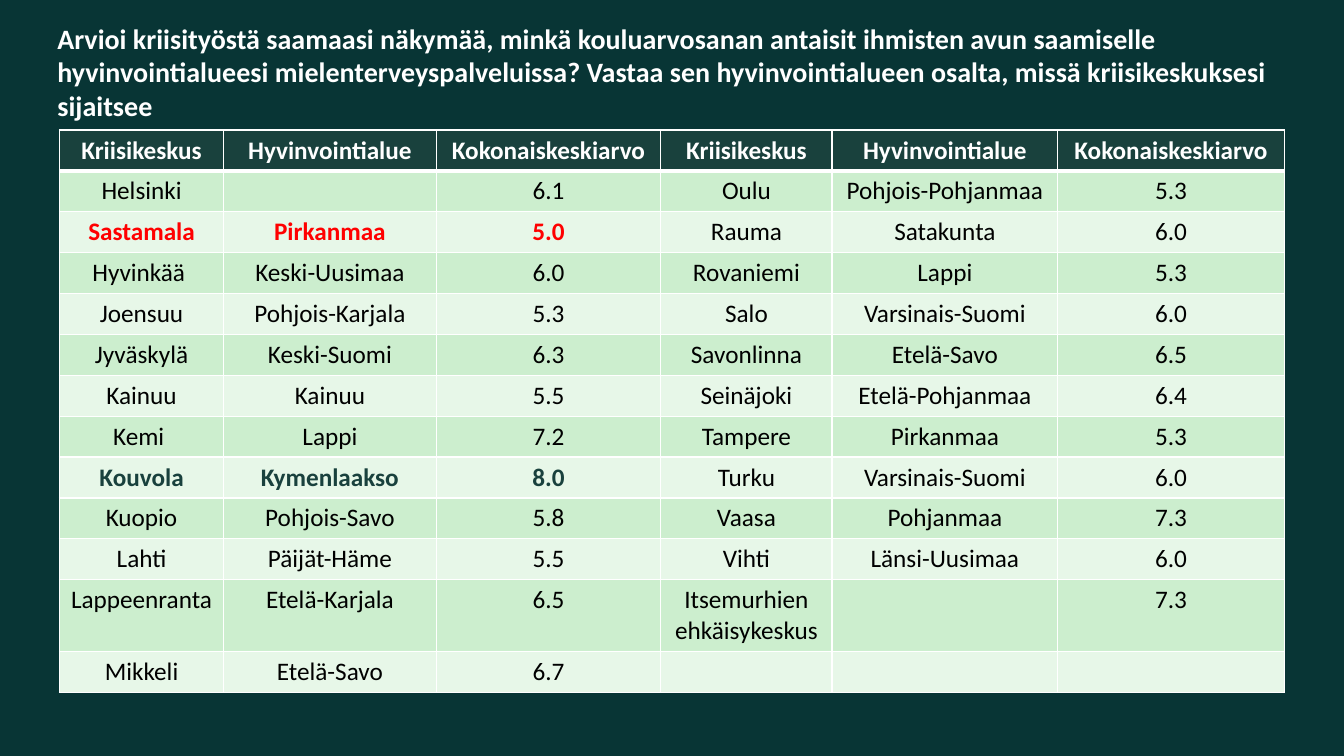
from lxml.etree import SubElement
from pptx import Presentation
from pptx.dml.color import RGBColor
from pptx.enum.text import PP_ALIGN
from pptx.oxml.ns import qn
from pptx.util import Inches, Pt

DARK_GREEN, WHITE, BLACK, RED = "19413D", "FFFFFF", "000000", "FF0000"
BANDS = ("E7F7E8", "CCEECE")
COLUMN_WIDTHS = (1.63, 2.11, 2.23, 1.7, 2.24, 2.25)
HIGHLIGHTS = {"Sastamala": RED, "Kouvola": DARK_GREEN}

QUESTION = (
    "Arvioi kriisityöstä saamaasi näkymää, minkä kouluarvosanan antaisit ihmisten "
    "avun saamiselle hyvinvointialueesi mielenterveyspalveluissa? Vastaa sen "
    "hyvinvointialueen osalta, missä kriisikeskuksesi sijaitsee"
)
HEADINGS = ("Kriisikeskus", "Hyvinvointialue", "Kokonaiskeskiarvo")
LEFT_GRADES = [
    ("Helsinki", "", "6.1"),
    ("Sastamala", "Pirkanmaa", "5.0"),
    ("Hyvinkää ", "Keski-Uusimaa", "6.0"),
    ("Joensuu", "Pohjois-Karjala", "5.3"),
    ("Jyväskylä", "Keski-Suomi", "6.3"),
    ("Kainuu", "Kainuu", "5.5"),
    ("Kemi ", "Lappi", "7.2"),
    ("Kouvola", "Kymenlaakso", "8.0"),
    ("Kuopio", "Pohjois-Savo", "5.8"),
    ("Lahti", "Päijät-Häme", "5.5"),
    ("Lappeenranta", "Etelä-Karjala", "6.5"),
    ("Mikkeli", "Etelä-Savo", "6.7"),
]
RIGHT_GRADES = [
    ("Oulu", "Pohjois-Pohjanmaa", "5.3"),
    ("Rauma", "Satakunta", "6.0"),
    ("Rovaniemi", "Lappi", "5.3"),
    ("Salo", "Varsinais-Suomi", "6.0"),
    ("Savonlinna", "Etelä-Savo", "6.5"),
    ("Seinäjoki", "Etelä-Pohjanmaa", "6.4"),
    ("Tampere", "Pirkanmaa", "5.3"),
    ("Turku", "Varsinais-Suomi", "6.0"),
    ("Vaasa", "Pohjanmaa", "7.3"),
    ("Vihti", "Länsi-Uusimaa", "6.0"),
    ("Itsemurhien ehkäisykeskus", "", "7.3"),
    ("", "", ""),
]


def color(hex_value):
    return RGBColor.from_string(hex_value)


def style_font(font, size, hex_value, bold):
    font.name = "Calibri"
    font.size = Pt(size)
    font.bold = bold
    font.color.rgb = color(hex_value)


def set_borders(cell, top, bottom):
    """Draw white borders; top and bottom are widths in points."""
    properties = cell._tc.get_or_add_tcPr()
    widths = {"a:lnL": 1, "a:lnR": 1, "a:lnT": top, "a:lnB": bottom}
    for position, (side, width) in enumerate(widths.items()):
        line = SubElement(properties, qn(side), w=str(Pt(width)))
        fill = SubElement(line, qn("a:solidFill"))
        SubElement(fill, qn("a:srgbClr"), val=WHITE)
        properties.insert(position, line)


def fill_cell(cell, text, background, text_color, bold):
    cell.fill.solid()
    cell.fill.fore_color.rgb = color(background)
    paragraph = cell.text_frame.paragraphs[0]
    paragraph.alignment = PP_ALIGN.CENTER
    if text:
        paragraph.text = text
        style_font(paragraph.runs[0].font, 18, text_color, bold)


def add_question(slide, left, top, width, height):
    box = slide.shapes.add_textbox(left, top, width, height)
    box.text_frame.word_wrap = True
    box.text_frame.text = QUESTION
    style_font(box.text_frame.paragraphs[0].runs[0].font, 20, WHITE, True)


def add_grades(slide, left, top, width, height):
    rows = [(HEADINGS, HEADINGS), *zip(LEFT_GRADES, RIGHT_GRADES)]
    table = slide.shapes.add_table(
        len(rows), len(COLUMN_WIDTHS), left, top, width, height
    ).table
    for column, share in zip(table.columns, COLUMN_WIDTHS):
        column.width = int(width * share / sum(COLUMN_WIDTHS))

    for row, halves in enumerate(rows):
        is_header = row == 0
        background = DARK_GREEN if is_header else BANDS[row % 2]
        for half, entry in enumerate(halves):
            highlight = HIGHLIGHTS.get(entry[0])
            text_color = WHITE if is_header else highlight or BLACK
            bold = is_header or highlight is not None
            for offset, text in enumerate(entry):
                cell = table.cell(row, half * len(HEADINGS) + offset)
                fill_cell(cell, text, background, text_color, bold)
                set_borders(cell, 3 if row == 1 else 1, 3 if is_header else 1)


def main():
    presentation = Presentation()
    presentation.slide_width = Inches(13.33)
    presentation.slide_height = Inches(7.5)
    slide = presentation.slides.add_slide(presentation.slide_layouts[6])
    slide.background.fill.solid()
    slide.background.fill.fore_color.rgb = color("083535")
    add_grades(slide, Inches(0.59), Inches(1.29), Inches(12.15), Inches(5.27))
    add_question(slide, Inches(0.47), Inches(0.16), Inches(12.39), Inches(1.45))
    presentation.save("out.pptx")


if __name__ == "__main__":
    main()
